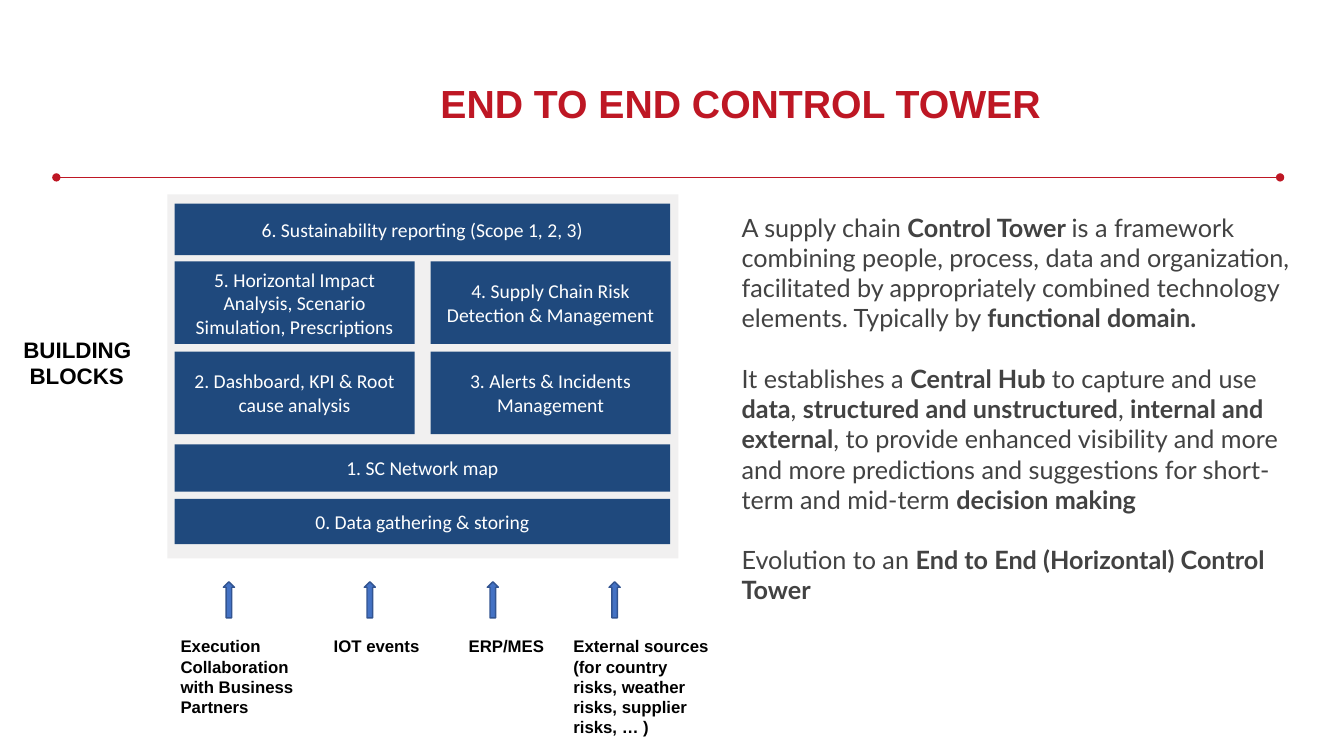
from dataclasses import dataclass

from lxml.etree import SubElement
from pptx import Presentation
from pptx.dml.color import RGBColor
from pptx.enum.shapes import MSO_CONNECTOR as Connector, MSO_SHAPE as Shape
from pptx.enum.text import MSO_ANCHOR as Anchor, MSO_AUTO_SIZE as AutoSize, PP_ALIGN as Align
from pptx.oxml.ns import qn
from pptx.util import Cm, Pt

COLORS = {
    "red": "BE1724", "panel": "F1F0F0", "block": "1F497D", "arrow": "4472C4",
    "arrow_line": "325491", "white": "FFFFFF", "black": "000000", "body": "424242",
}
LEFT, RIGHT, FULL, HALF = 4.4, 10.85, 12.49, 6.05
ARROW_TOP, ARROW_W, ARROW_H = 14.66, 0.28, 0.91
LABEL_TOP = 15.95


@dataclass
class Block:
    text: str
    x: float
    y: float
    w: float
    h: float


@dataclass
class Source:
    label: str
    arrow_x: float
    x: float
    w: float
    h: float


BLOCKS = [
    Block("6. Sustainability reporting (Scope 1, 2, 3)", LEFT, 5.13, FULL, 1.3),
    Block("5. Horizontal Impact Analysis, Scenario Simulation, Prescriptions", LEFT, 6.59, HALF, 2.08),
    Block("4. Supply Chain Risk Detection & Management", RIGHT, 6.59, HALF, 2.08),
    Block("2. Dashboard, KPI & Root cause analysis", LEFT, 8.86, HALF, 2.08),
    Block("3. Alerts & Incidents Management", RIGHT, 8.86, HALF, 2.08),
    Block("1. SC Network map", LEFT, 11.2, FULL, 1.19),
    Block("0. Data gathering & storing", LEFT, 12.57, FULL, 1.14),
]
SOURCES = [
    Source("Execution Collaboration with Business Partners", 5.77, 4.37, 3.86, 2.18),
    Source("IOT events", 9.32, 8.23, 4.55, 1.17),
    Source("ERP/MES", 12.42, 11.63, 4.55, 0.66),
    Source("External sources (for country risks, weather risks, supplier risks, … )",
           15.49, 14.27, 3.86, 2.72),
]
# Each paragraph is a list of runs: text, bold
BODY = [
    [("A supply chain ", False), ("Control Tower ", True),
     ("is a framework combining people, process, data and organization, facilitated by "
      "appropriately combined technology elements. Typically by ", False),
     ("functional domain.", True)],
    [("It establishes a ", False), ("Central Hub ", True), ("to capture and use ", False),
     ("data", True), (", ", False), ("structured and unstructured", True), (", ", False),
     ("internal and external", True),
     (", to provide enhanced visibility and more and more predictions and suggestions for "
      "short-term and mid-term ", False),
     ("decision making", True)],
    [("Evolution to an ", False), ("End to End (Horizontal) Control Tower", True)],
]


def rgb(name: str) -> RGBColor:
    return RGBColor.from_string(COLORS[name])


def add_run(p, text: str, font: str, size: float, color: str, bold: bool = False) -> None:
    r = p.add_run()
    r.text = text
    r.font.name, r.font.size, r.font.bold = font, Pt(size), bold
    r.font.color.rgb = rgb(color)


def place(sp, x: float, y: float, w: float, h: float) -> None:
    sp.left, sp.top, sp.width, sp.height = Cm(x), Cm(y), Cm(w), Cm(h)


def set_frame(tf, anchor: Anchor, side: float, edge: float) -> None:
    tf.word_wrap, tf.auto_size, tf.vertical_anchor = True, AutoSize.NONE, anchor
    tf.margin_left = tf.margin_right = Cm(side)
    tf.margin_top = tf.margin_bottom = Cm(edge)


def add_box(s, kind: Shape, x: float, y: float, w: float, h: float, fill: str, line: str = ""):
    sp = s.shapes.add_shape(kind, Cm(x), Cm(y), Cm(w), Cm(h))
    sp.shadow.inherit = False
    sp.fill.solid()
    sp.fill.fore_color.rgb = rgb(fill)
    if line:
        sp.line.color.rgb = rgb(line)
        sp.line.width = Pt(1)
    else:
        sp.line.fill.background()
    return sp


def add_label(s, lines: list[str], x: float, y: float, w: float, h: float, size: float) -> None:
    tf = s.shapes.add_textbox(Cm(x), Cm(y), Cm(w), Cm(h)).text_frame
    set_frame(tf, Anchor.TOP, 0.18, 0.08)
    for i, line in enumerate(lines):
        p = tf.add_paragraph() if i else tf.paragraphs[0]
        add_run(p, line, "Arial", size, "black", True)


def add_block(s, block: Block) -> None:
    sp = add_box(s, Shape.RECTANGLE, block.x, block.y, block.w, block.h, "block")
    set_frame(sp.text_frame, Anchor.MIDDLE, 0.08, 0.08)
    p = sp.text_frame.paragraphs[0]
    p.alignment = Align.CENTER
    add_run(p, block.text, "Calibri", 14, "white")


def add_source(s, source: Source) -> None:
    add_box(s, Shape.UP_ARROW, source.arrow_x - ARROW_W / 2, ARROW_TOP, ARROW_W, ARROW_H,
            "arrow", "arrow_line")
    add_label(s, [source.label], source.x, LABEL_TOP, source.w, source.h, 12)


def add_rule(s, x1: float, x2: float, y: float) -> None:
    rule = s.shapes.add_connector(Connector.STRAIGHT, Cm(x1), Cm(y), Cm(x2), Cm(y))
    rule.line.color.rgb = rgb("red")
    rule.line.width = Pt(0.75)
    ln = rule.line._get_or_add_ln()
    for end in ("a:headEnd", "a:tailEnd"):
        SubElement(ln, qn(end), type="oval")
    SubElement(rule._element.spPr, qn("a:effectLst"))


def fill_title(title) -> None:
    place(title, 10.85, 1.88, 22.17, 1.45)
    set_frame(title.text_frame, Anchor.TOP, 0.25, 0.13)
    p = title.text_frame.paragraphs[0]
    p.alignment = Align.LEFT
    add_run(p, "END TO END CONTROL TOWER", "Arial", 28, "red", True)


def fill_body(body) -> None:
    place(body, 18.44, 5.21, 14.73, 11.02)
    tf = body.text_frame
    set_frame(tf, Anchor.TOP, 0.25, 0.13)
    for i, runs in enumerate(BODY):
        p = tf.add_paragraph() if i else tf.paragraphs[0]
        p.space_before = Pt(21.6 if i else 0)
        pPr = p._p.get_or_add_pPr()
        pPr.set("marL", "0")
        pPr.set("indent", "0")
        SubElement(pPr, qn("a:buNone"))
        for text, bold in runs:
            add_run(p, text, "Lato", 18, "body", bold)


def main() -> None:
    prs = Presentation()
    prs.slide_width, prs.slide_height = Cm(33.87), Cm(19.05)
    s = prs.slides.add_slide(prs.slide_layouts[1])

    # Heading and rule
    fill_title(s.shapes.title)
    add_rule(s, 1.42, 32.26, 4.47)

    # Building blocks
    add_box(s, Shape.RECTANGLE, 4.22, 4.9, 12.88, 9.17, "panel")
    for block in BLOCKS:
        add_block(s, block)
    add_label(s, ["BUILDING", " BLOCKS"], 0.41, 8.38, 3.78, 1.52, 16)

    # Data sources
    for source in SOURCES:
        add_source(s, source)

    # Explanation
    fill_body(s.placeholders[1])
    prs.save("out.pptx")


if __name__ == "__main__":
    main()
